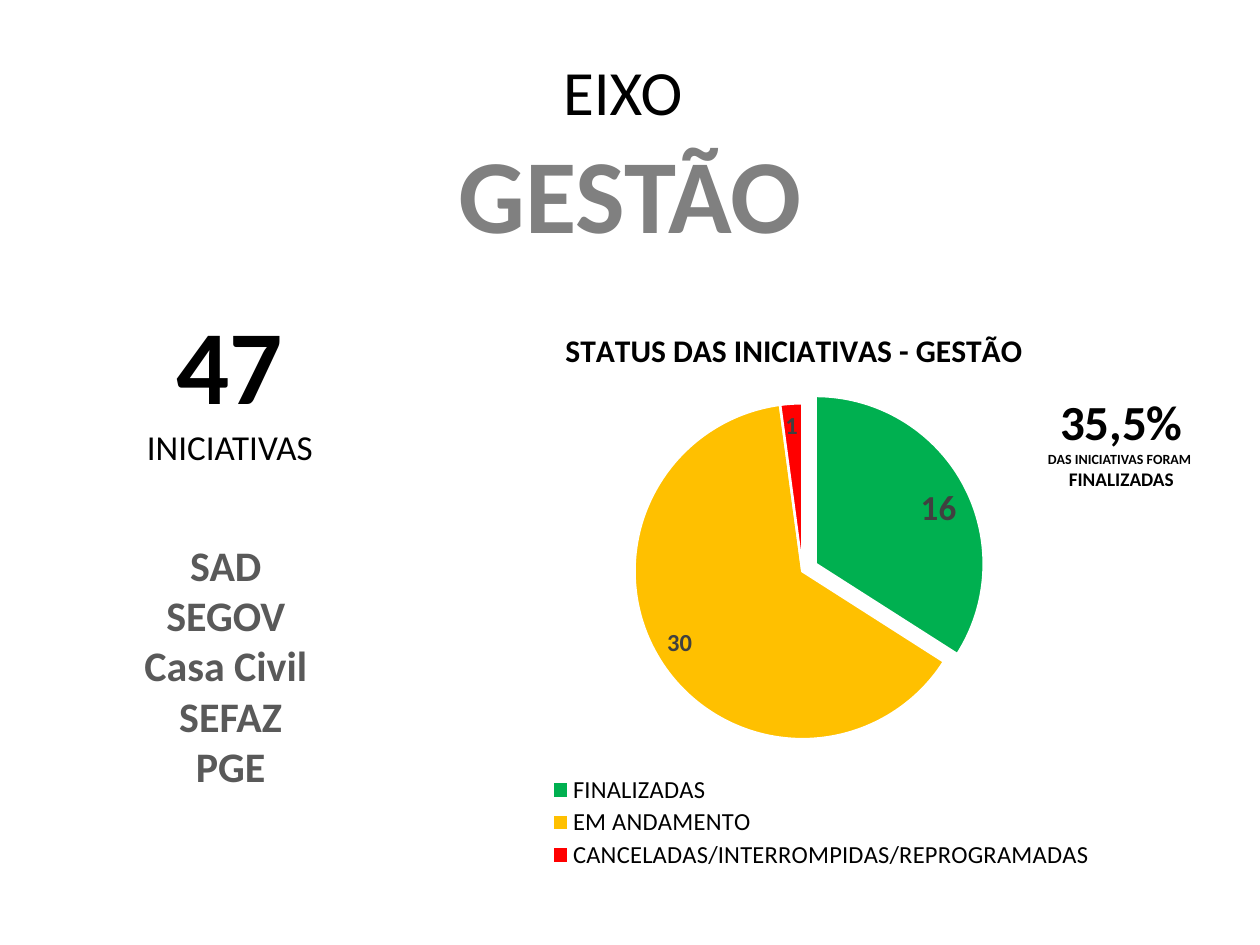
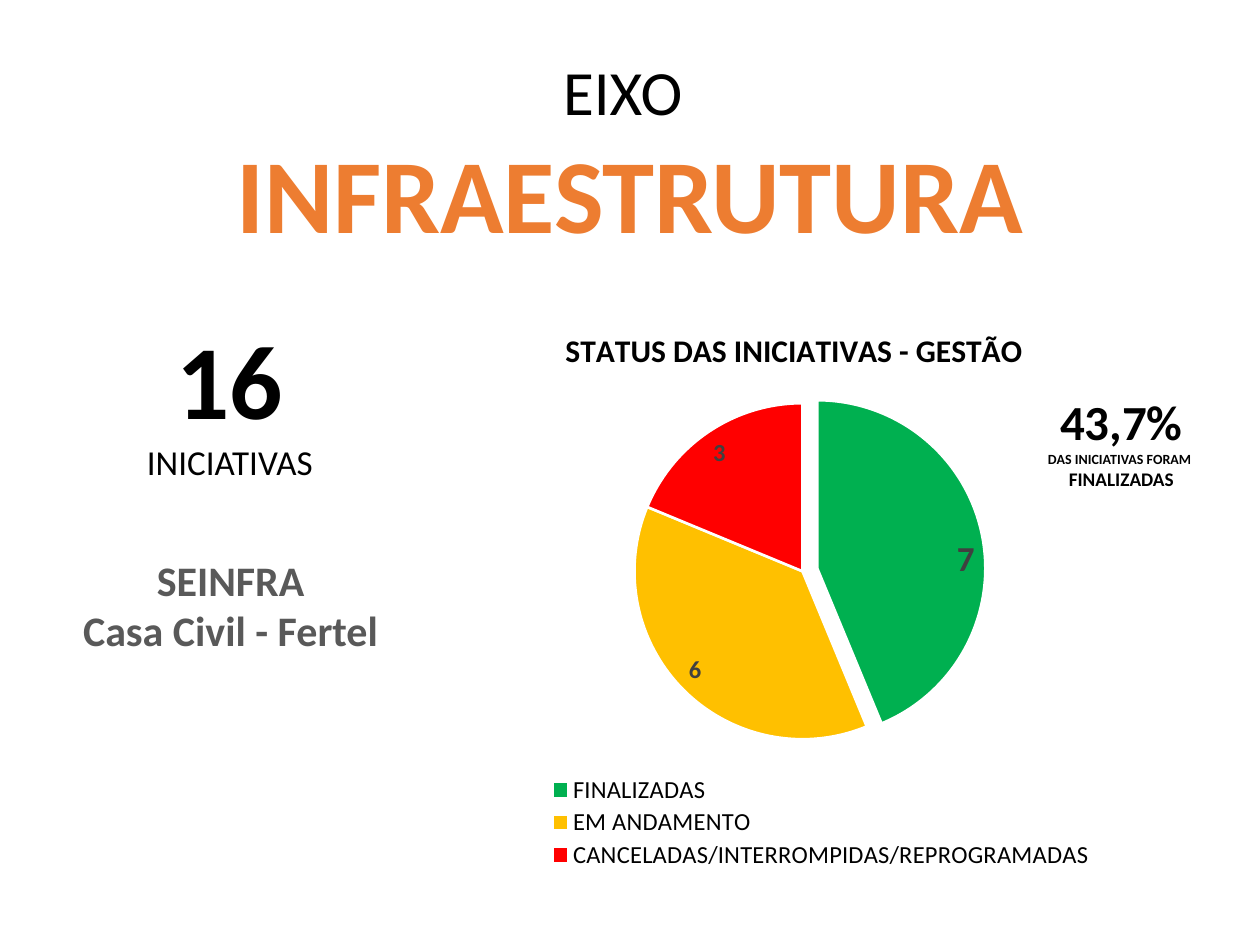
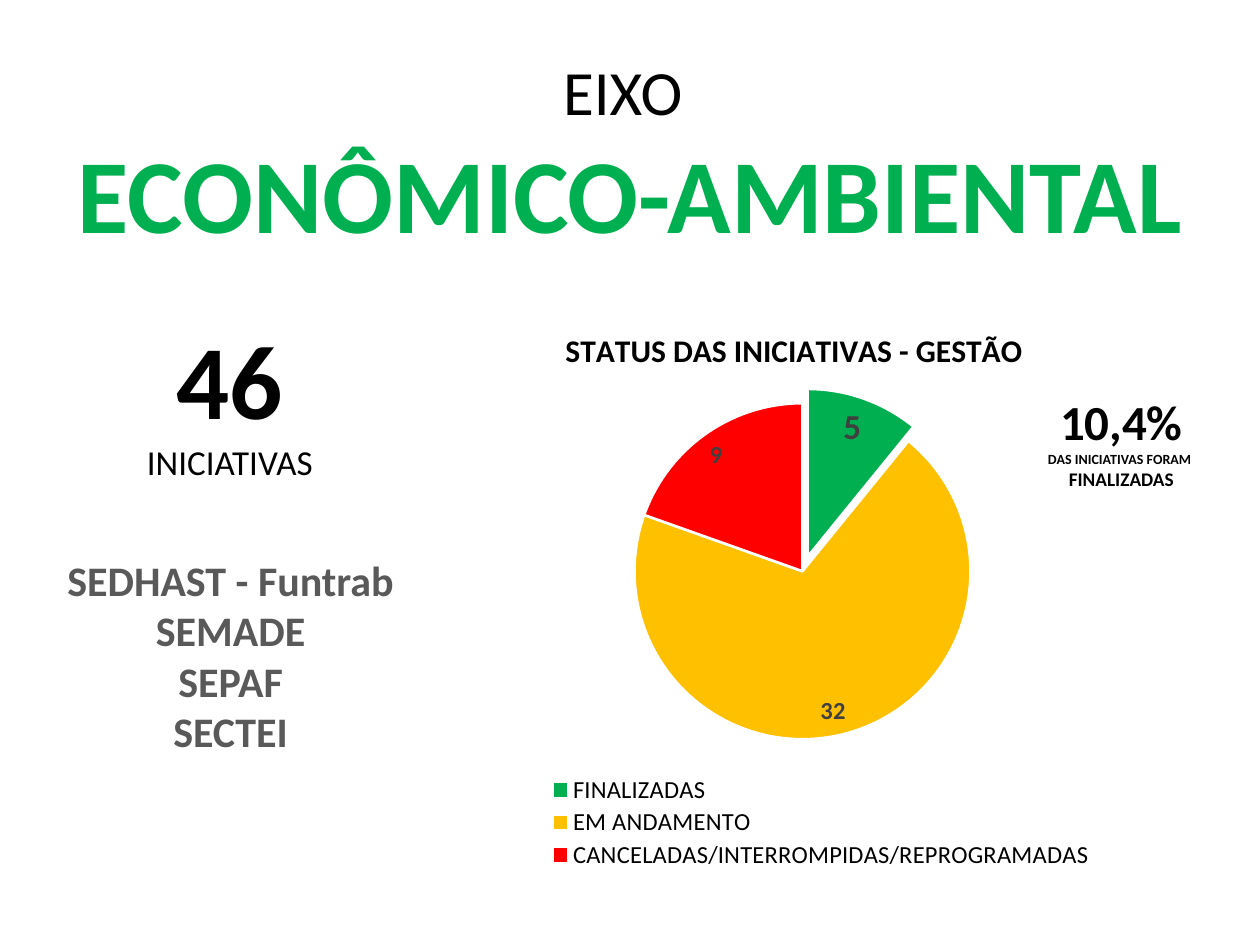
from dataclasses import dataclass

import pptx
import pptx.chart.data
import pptx.dml.color
import pptx.enum.chart
import pptx.enum.text
import pptx.oxml
import pptx.oxml.ns
import pptx.util


@dataclass(frozen=True)
class Theme:
    font: str = "Calibri"
    black: str = "000000"
    white: str = "FFFFFF"
    gray: str = "808080"
    orange: str = "ED7D31"
    green: str = "00B050"
    amber: str = "FFC000"
    red: str = "FF0000"
    agency: str = "595959"
    label: str = "404040"
    display: int = 60
    eyebrow: int = 36
    percent: int = 28
    agency_size: int = 24
    caption: int = 20
    chart_title: int = 18
    chart_text: int = 14
    finished: int = 11
    small: int = 8


THEME = Theme()
WIDTH = pptx.util.Inches(10)
HEIGHT = pptx.util.Inches(7.5)
COLUMNS, ROWS = 100, 75
STATUSES = {
    "FINALIZADAS": THEME.green,
    "EM ANDAMENTO": THEME.amber,
    "CANCELADAS/INTERROMPIDAS/REPROGRAMADAS": THEME.red,
}
AXES = [
    ("GESTÃO", THEME.gray, "47", 23.3,
     ["SAD ", "SEGOV ", "Casa Civil ", "SEFAZ", "PGE"], (16, 30, 1), "35,5%"),
    ("INFRAESTRUTURA", THEME.orange, "16", 24.5,
     ["SEINFRA", "Casa Civil - Fertel"], (7, 6, 3), "43,7%"),
    ("ECONÔMICO-AMBIENTAL", THEME.green, "46", 24.5,
     ["SEDHAST - Funtrab", "SEMADE", "SEPAF", "SECTEI"], (5, 32, 9), "10,4%"),
]


def place(column, row, columns, rows):
    return (int(WIDTH * column / COLUMNS), int(HEIGHT * row / ROWS),
            int(WIDTH * columns / COLUMNS), int(HEIGHT * rows / ROWS))


def rgb(color):
    return pptx.dml.color.RGBColor.from_string(color)


def style_font(font, size, color=THEME.black, bold=False):
    font.name = THEME.font
    font.size = pptx.util.Pt(size)
    font.bold = bold
    font.color.rgb = rgb(color)


def add_centered_text(slide, cell, lines):
    frame = slide.shapes.add_textbox(*place(*cell)).text_frame
    frame.word_wrap = True
    frame.auto_size = pptx.enum.text.MSO_AUTO_SIZE.SHAPE_TO_FIT_TEXT
    for index, (text, size, color, bold) in enumerate(lines):
        paragraph = frame.add_paragraph() if index else frame.paragraphs[0]
        paragraph.alignment = pptx.enum.text.PP_ALIGN.CENTER
        run = paragraph.add_run()
        run.text = text
        style_font(run.font, size, color, bold)


def set_layout(element, after=None, inner=False, **shares):
    for old in element.xpath("c:layout"):
        element.remove(old)
    settings = {"layoutTarget": "inner"} if inner else {}
    settings.update(xMode="edge", yMode="edge", **shares)
    children = "".join(f'<c:{name} val="{value}"/>' for name, value in settings.items())
    layout = pptx.oxml.parse_xml(
        f'<c:layout {pptx.oxml.ns.nsdecls("c")}>'
        f"<c:manualLayout>{children}</c:manualLayout></c:layout>")
    if after:
        element.xpath(after)[0].addnext(layout)
    else:
        element.insert(0, layout)


def explode(point, percent):
    properties = point.format.fill and point.format.line
    properties.color.rgb = rgb(THEME.white)


def style_slice(series, index, color):
    point = series.points[index]
    point.format.fill.solid()
    point.format.fill.fore_color.rgb = rgb(color)
    point.format.line.color.rgb = rgb(THEME.white)
    point.format.line.width = pptx.util.Pt(1.5)
    label = point.data_label
    size = THEME.chart_text if index else THEME.caption
    style_font(label.font, size, THEME.label, True)
    label.position = pptx.enum.chart.XL_LABEL_POSITION.INSIDE_END


def pull_out_first_slice(chart, percent):
    explosion = pptx.oxml.parse_xml(
        f'<c:explosion {pptx.oxml.ns.nsdecls("c")} val="{percent}"/>')
    chart.element.xpath(".//c:dPt/c:spPr")[0].addprevious(explosion)


def add_status_pie(slide, values):
    data = pptx.chart.data.CategoryChartData()
    data.categories = list(STATUSES)
    data.add_series("Series 1", values)
    chart = slide.shapes.add_chart(
        pptx.enum.chart.XL_CHART_TYPE.PIE, *place(25.9, 23.3, 74.1, 46.9), data).chart
    style_font(chart.font, THEME.chart_text)

    chart.has_title = True
    run = chart.chart_title.text_frame.paragraphs[0].add_run()
    run.text = "STATUS DAS INICIATIVAS - GESTÃO"
    style_font(run.font, THEME.chart_title, bold=True)
    set_layout(chart.chart_title.element, "c:tx", x=0.25, y=0.05)

    chart.has_legend = True
    chart.legend.position = pptx.enum.chart.XL_LEGEND_POSITION.BOTTOM
    chart.legend.include_in_layout = False
    style_font(chart.legend.font, THEME.chart_text)
    set_layout(chart.element.xpath(".//c:legend")[0], "c:legendPos",
               x=0.23, y=0.81, w=0.6, h=0.17)

    set_layout(chart.element.xpath(".//c:plotArea")[0], inner=True,
               x=0.33, y=0.17, w=0.36, h=0.6)
    plot = chart.plots[0]
    plot.vary_by_categories = True
    for index, color in enumerate(STATUSES.values()):
        style_slice(plot.series[0], index, color)
    pull_out_first_slice(chart, 9)


def add_axis_slide(presentation, name, color, total, total_row, agencies, values, share):
    slide = presentation.slides.add_slide(presentation.slide_layouts[6])
    add_centered_text(slide, (0, 3.7, COLUMNS, 17.2), [
        ("EIXO ", THEME.eyebrow, THEME.black, False),
        (name, THEME.display, color, True)])
    add_centered_text(slide, (5.4, total_row, 25.7, 14.5), [
        (total, THEME.display, THEME.black, True),
        ("INICIATIVAS", THEME.caption, THEME.black, False)])
    add_centered_text(slide, (3.9, total_row + 19, 28.8, 1 + 4 * len(agencies)), [
        (agency, THEME.agency_size, THEME.agency, True) for agency in agencies])
    add_status_pie(slide, values)
    add_centered_text(slide, (80.2, 30.6, 17.6, 9.3), [
        (share, THEME.percent, THEME.black, True),
        ("DAS INICIATIVAS FORAM ", THEME.small, THEME.black, True),
        ("FINALIZADAS", THEME.finished, THEME.black, True)])


def main():
    presentation = pptx.Presentation()
    presentation.slide_width = WIDTH
    presentation.slide_height = HEIGHT
    for axis in AXES:
        add_axis_slide(presentation, *axis)
    presentation.save("out.pptx")


if __name__ == "__main__":
    main()
